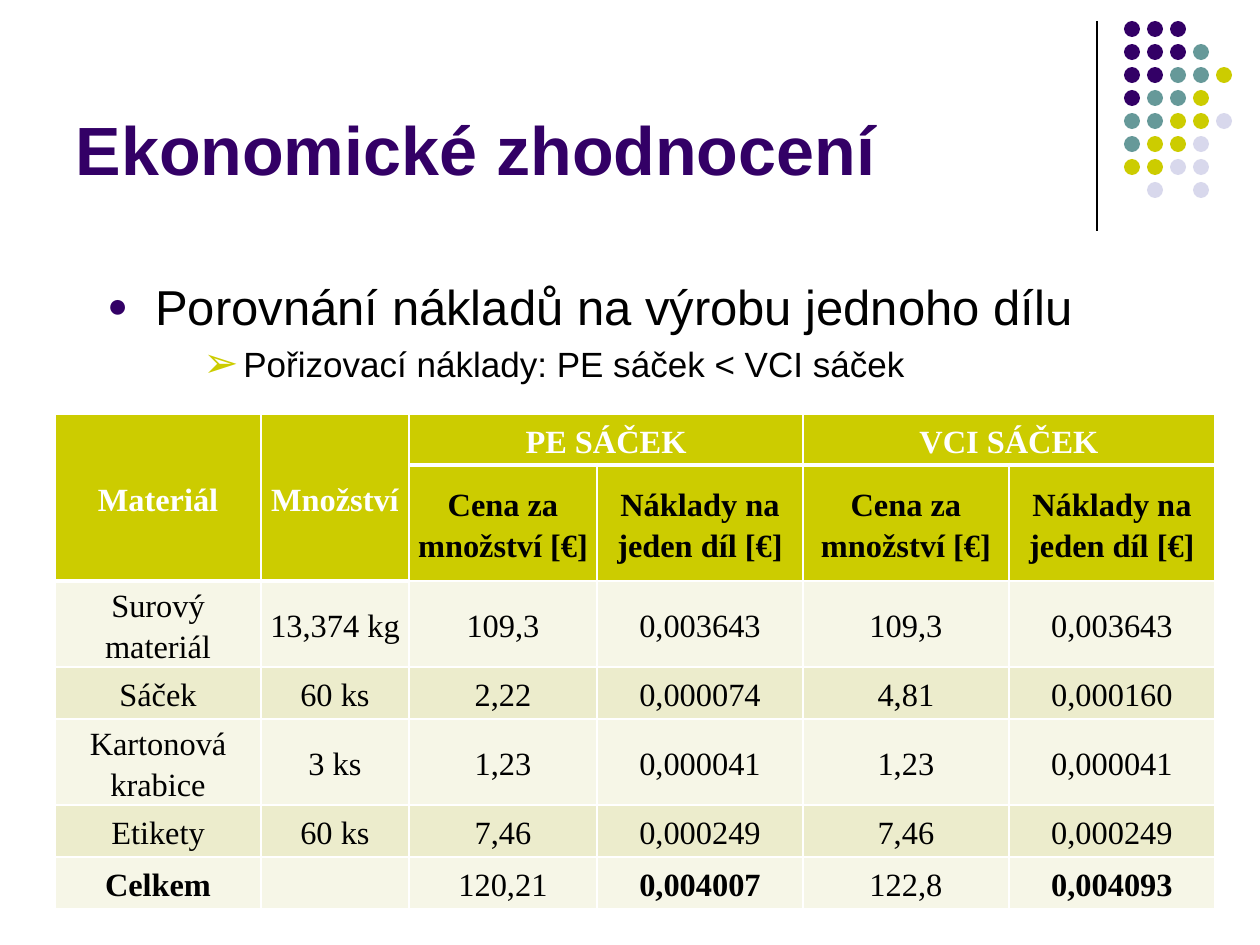
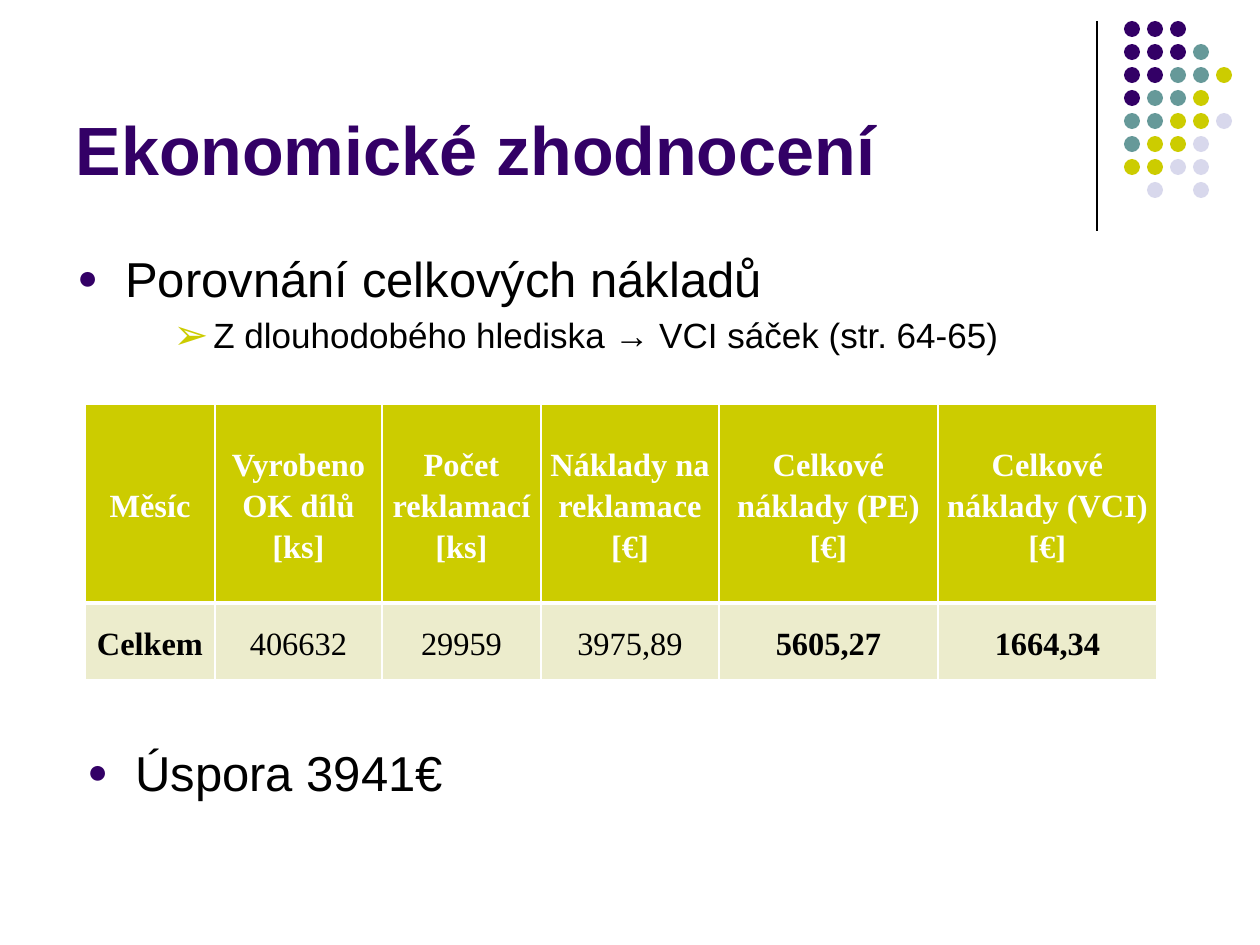
from lxml import etree
from pptx import Presentation
from pptx.dml.color import RGBColor
from pptx.enum.shapes import MSO_CONNECTOR, MSO_SHAPE
from pptx.enum.text import MSO_ANCHOR, MSO_AUTO_SIZE, PP_ALIGN
from pptx.oxml.ns import qn
from pptx.util import Emu, Pt

LINE = MSO_CONNECTOR.STRAIGHT
OVAL = MSO_SHAPE.OVAL
MIDDLE, BOTTOM = MSO_ANCHOR.MIDDLE, MSO_ANCHOR.BOTTOM
LEFT, CENTER = PP_ALIGN.LEFT, PP_ALIGN.CENTER
FIXED = MSO_AUTO_SIZE.NONE

SANS, SERIF = "Arial", "Times New Roman"
BLACK, WHITE = "000000", "FFFFFF"
PURPLE, TEAL, LIME, LILAC = "330066", "669999", "CCCC00", "D8D8EC"
BANDS = ("F6F6E7", "ECECCC")
DOTS = ("PPP", "PPPT", "PPTTY", "PTTY", "TTYYL", "TYYL", "YYLL", " L L")
INKS = {"P": PURPLE, "T": TEAL, "Y": LIME, "L": LILAC}
LEVELS = (
    (28, "●", PURPLE, 70, 48, -48),
    (20, "➢", LIME, 120, 136, -40),
)


def px(n):
    return Emu(round(n * 914400 / 126))


def box(*sides):
    return [px(n) for n in sides]


def rgb(code):
    return RGBColor.from_string(code)


def style(para, face, size, color, bold=False):
    font = para.font
    font.name, font.size, font.bold = face, Pt(size), bold
    font.color.rgb = rgb(color)


def add(parent, tag, **attrs):
    return etree.SubElement(parent, qn(tag), attrs)


def title(slide, text, area):
    head = slide.shapes.title
    head.left, head.top, head.width, head.height = box(*area)
    frame = head.text_frame
    frame.text = text
    frame.auto_size = FIXED
    frame.vertical_anchor = BOTTOM
    para = frame.paragraphs[0]
    para.alignment = LEFT
    style(para, SANS, 39, PURPLE, True)


def corner(slide, left, top):
    rule = slide.shapes.add_connector(LINE, *box(left, top, left, top + 210))
    rule.line.color.rgb = rgb(BLACK)
    rule.line.width = Pt(0.75)
    add(rule._element.spPr, "a:effectLst")
    group = slide.shapes.add_group_shape()
    for row, marks in enumerate(DOTS):
        for col, mark in enumerate(marks):
            if mark not in INKS:
                continue
            spot = box(left + 27 + col * 23, top + row * 23, 16, 16)
            dot = group.shapes.add_shape(OVAL, *spot)
            dot.shadow.inherit = False
            dot.fill.solid()
            dot.fill.fore_color.rgb = rgb(INKS[mark])
            dot.line.fill.background()


def bullets(slide, area, *lines):
    frame = slide.shapes.add_textbox(*box(*area)).text_frame
    frame.word_wrap = True
    for level, text in enumerate(lines):
        size, mark, color, scale, margin, indent = LEVELS[level]
        para = frame.add_paragraph() if level else frame.paragraphs[0]
        para.text = text
        para.level = level
        props = para._p.get_or_add_pPr()
        props.set("marL", str(px(margin)))
        props.set("indent", str(px(indent)))
        add(add(props, "a:buClr"), "a:srgbClr", val=color)
        add(props, "a:buSzPct", val=str(scale * 1000))
        add(props, "a:buFont", typeface=SANS)
        add(props, "a:buChar", char=mark)
        if level:
            para.space_before = Pt(size * 0.2)
        style(para, SANS, size, BLACK)


def borders(cell, above, below):
    props = cell._tc.get_or_add_tcPr()
    widths = {"a:lnL": 1, "a:lnR": 1, "a:lnT": above, "a:lnB": below}
    for place, (tag, width) in enumerate(widths.items()):
        edge = etree.Element(qn(tag), w=str(Pt(width)))
        add(add(edge, "a:solidFill"), "a:srgbClr", val=WHITE)
        props.insert(place, edge)


def costs(slide, spot, cols, rows, data, heads, bold, pad, spans=()):
    area = box(*spot, sum(cols), sum(rows))
    grid = slide.shapes.add_table(len(rows), len(cols), *area).table
    grid.first_row = grid.horz_banding = False
    for col, width in enumerate(cols):
        grid.columns[col].width = px(width)
    for row, height in enumerate(rows):
        grid.rows[row].height = px(height)
    for row, texts in enumerate(data):
        for col, text in enumerate(texts):
            cell = grid.cell(row, col)
            cell.text = text
            cell.vertical_anchor = MIDDLE
            cell.margin_left = cell.margin_right = px(pad)
            cell.margin_top = cell.margin_bottom = 0
            top = row < max(heads)
            white = row < heads[col]
            cell.fill.solid()
            cell.fill.fore_color.rgb = rgb(LIME if top else BANDS[row % 2])
            borders(cell, 3 if row == heads[col] else 1, 3 if white else 1)
            strong = top or (row == len(rows) - 1 and col in bold)
            for para in cell.text_frame.paragraphs:
                para.alignment = CENTER
                para.line_spacing = 1.15
                style(para, SERIF, 18.5, WHITE if white else BLACK, strong)
    for start, end in spans:
        grid.cell(*start).merge(grid.cell(*end))


def page(deck):
    slide = deck.slides.add_slide(deck.slide_layouts[5])
    title(slide, "Ekonomické zhodnocení", (63, 16, 1040, 179))
    corner(slide, 1097, 21)
    return slide


def parts(deck):
    slide = page(deck)
    pair = ["Cena za množství [€]", "Náklady na jeden díl [€]"]
    data = [
        ["Materiál", "Množství", "PE SÁČEK", "", "VCI SÁČEK", ""],
        ["", "", *pair, *pair],
        ["Surový materiál", "13,374 kg", "109,3", "0,003643", "109,3", "0,003643"],
        ["Sáček", "60 ks", "2,22", "0,000074", "4,81", "0,000160"],
        ["Kartonová krabice", "3 ks", "1,23", "0,000041", "1,23", "0,000041"],
        ["Etikety", "60 ks", "7,46", "0,000249", "7,46", "0,000249"],
        ["Celkem", "", "120,21", "0,004007", "122,8", "0,004093"],
    ]
    spans = [((0, 0), (1, 0)), ((0, 1), (1, 1)),
             ((0, 2), (0, 3)), ((0, 4), (0, 5))]
    costs(slide, (55, 414), (206, 148, 188, 206, 206, 206),
          (51, 116, 86, 52, 86, 52, 52), data,
          (2, 2, 1, 1, 1, 1), (0, 3, 5), 5, spans)
    bullets(slide, (95, 270, 1111, 139),
            "Porovnání nákladů na výrobu jednoho dílu",
            "Pořizovací náklady: PE sáček < VCI sáček")


def totals(deck):
    slide = page(deck)
    data = [
        ["Měsíc", "Vyrobeno\nOK dílů\n[ks]", "Počet reklamací\n[ks]",
         "Náklady na reklamace\n[€]", "Celkové náklady (PE)\n[€]",
         "Celkové náklady (VCI)\n[€]"],
        ["Celkem", "406632", "29959", "3975,89", "5605,27", "1664,34"],
    ]
    costs(slide, (85, 404), (130, 167, 159, 178, 219, 219), (199, 77),
          data, [1] * 6, (0, 4, 5), 9)
    bullets(slide, (65, 242, 1133, 186), "Porovnání celkových nákladů",
            "Z dlouhodobého hlediska → VCI sáček (str. 64-65)")
    bullets(slide, (75, 736, 1133, 186), "Úspora 3941€")


def main():
    deck = Presentation()
    deck.slide_width, deck.slide_height = box(1260, 945)
    parts(deck)
    totals(deck)
    deck.save("out.pptx")


if __name__ == "__main__":
    main()
